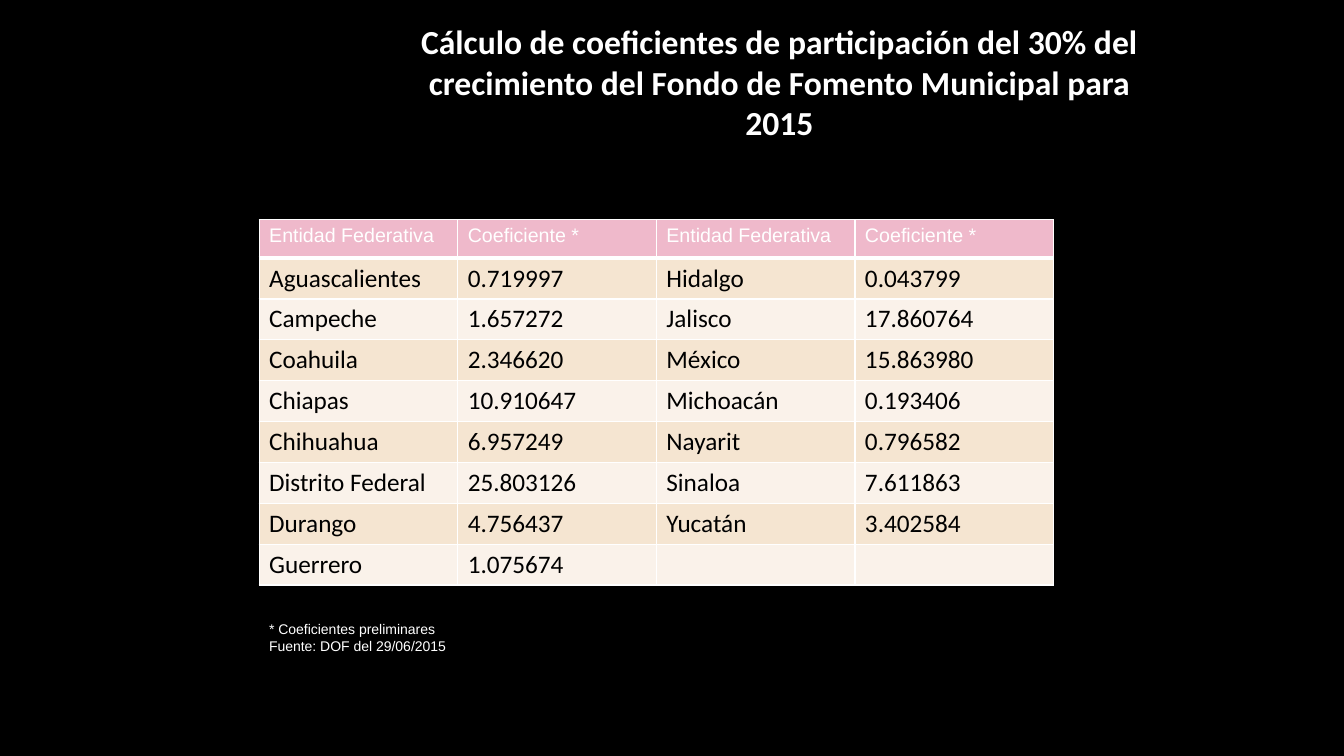
import pptx
import pptx.dml.color
import pptx.enum.text
import pptx.oxml
import pptx.util
from lxml import etree
from pptx.util import Inches

WHITE, BLACK = "FFFFFF", "000000"
HEADER_FILL = "EFB9CB"
BAND_FILLS = ("F5E5D1", "FAF2EA")
HEADINGS = ("Entidad Federativa", "Coeficiente *") * 2
COEFFICIENTS = (
    ("Aguascalientes", "0.719997", "Hidalgo", "0.043799"),
    ("Campeche", "1.657272", "Jalisco", "17.860764"),
    ("Coahuila", "2.346620", "México", "15.863980"),
    ("Chiapas", "10.910647", "Michoacán", "0.193406"),
    ("Chihuahua", "6.957249", "Nayarit", "0.796582"),
    ("Distrito Federal", "25.803126", "Sinaloa", "7.611863"),
    ("Durango", "4.756437", "Yucatán", "3.402584"),
    ("Guerrero", "1.075674", "", ""),
)


def color(hex_code):
    """Return the colour for a hex string."""
    return pptx.dml.color.RGBColor.from_string(hex_code)


def add_span(para, text, size, font, hex_code, bold=False):
    """Add one formatted run to a paragraph."""
    span = para.add_run()
    span.text = text
    span.font.size = pptx.util.Pt(size)
    span.font.name = font
    span.font.bold = bold
    span.font.color.rgb = color(hex_code)


def add_text(page, place, lines, size, font, bold=False, align=None):
    """Add a white text box with one paragraph per line."""
    box = page.shapes.add_textbox(*map(Inches, place))
    frame = box.text_frame
    frame.word_wrap = True
    frame.auto_size = pptx.enum.text.MSO_AUTO_SIZE.SHAPE_TO_FIT_TEXT
    for index, line in enumerate(lines):
        para = frame.add_paragraph() if index else frame.paragraphs[0]
        para.alignment = align
        add_span(para, line, size, font, WHITE, bold)


def set_borders(cell, bottom):
    """Draw white cell borders, with the given bottom width in points."""
    properties = cell._tc.get_or_add_tcPr()
    widths = {"lnL": 1, "lnR": 1, "lnT": 1, "lnB": bottom}
    for index, (side, width) in enumerate(widths.items()):
        line = etree.Element(pptx.oxml.ns.qn(f"a:{side}"), w=str(pptx.util.Pt(width)))
        fill = etree.SubElement(line, pptx.oxml.ns.qn("a:solidFill"))
        etree.SubElement(fill, pptx.oxml.ns.qn("a:srgbClr"), val=WHITE)
        properties.insert(index, line)


def fill_row(row, texts, fill, bottom, *style):
    """Write, fill and border the cells of one row."""
    for cell, text in zip(row.cells, texts):
        cell.fill.solid()
        cell.fill.fore_color.rgb = color(fill)
        set_borders(cell, bottom)
        if text:
            add_span(cell.text_frame.paragraphs[0], text, *style)


def add_coefficients(page):
    """Add the table of coefficients by state."""
    place = map(Inches, (2.57, 2.18, 7.88, 3.58))
    table = page.shapes.add_table(len(COEFFICIENTS) + 1, len(HEADINGS), *place).table
    for column in table.columns:
        column.width = Inches(1.97)
    for index, row in enumerate(table.rows):
        row.height = Inches(0.4 if index else 0.38)
    fill_row(table.rows[0], HEADINGS, HEADER_FILL, 3, 14, "Arial", WHITE)
    for index, texts in enumerate(COEFFICIENTS):
        fill = BAND_FILLS[index % 2]
        fill_row(table.rows[index + 1], texts, fill, 1, 18, "Calibri", BLACK)


def main():
    """Build and save the slide."""
    deck = pptx.Presentation()
    deck.slide_width, deck.slide_height = Inches(13.33), Inches(7.5)
    page = deck.slides.add_slide(deck.slide_layouts[6])
    page.background.fill.solid()
    page.background.fill.fore_color.rgb = color(BLACK)
    add_coefficients(page)
    title = ("Cálculo de coeficientes de participación del 30% del "
             "crecimiento del Fondo de Fomento Municipal para 2015")
    add_text(page, (3.79, 0.16, 7.88, 1.31), [title], 24, "Calibri", True,
             pptx.enum.text.PP_ALIGN.CENTER)
    notes = ("* Coeficientes preliminares", "Fuente: DOF del 29/06/2015")
    add_text(page, (2.57, 6.11, 7.88, 0.44), notes, 10, "Arial")
    deck.save("out.pptx")


if __name__ == "__main__":
    main()
